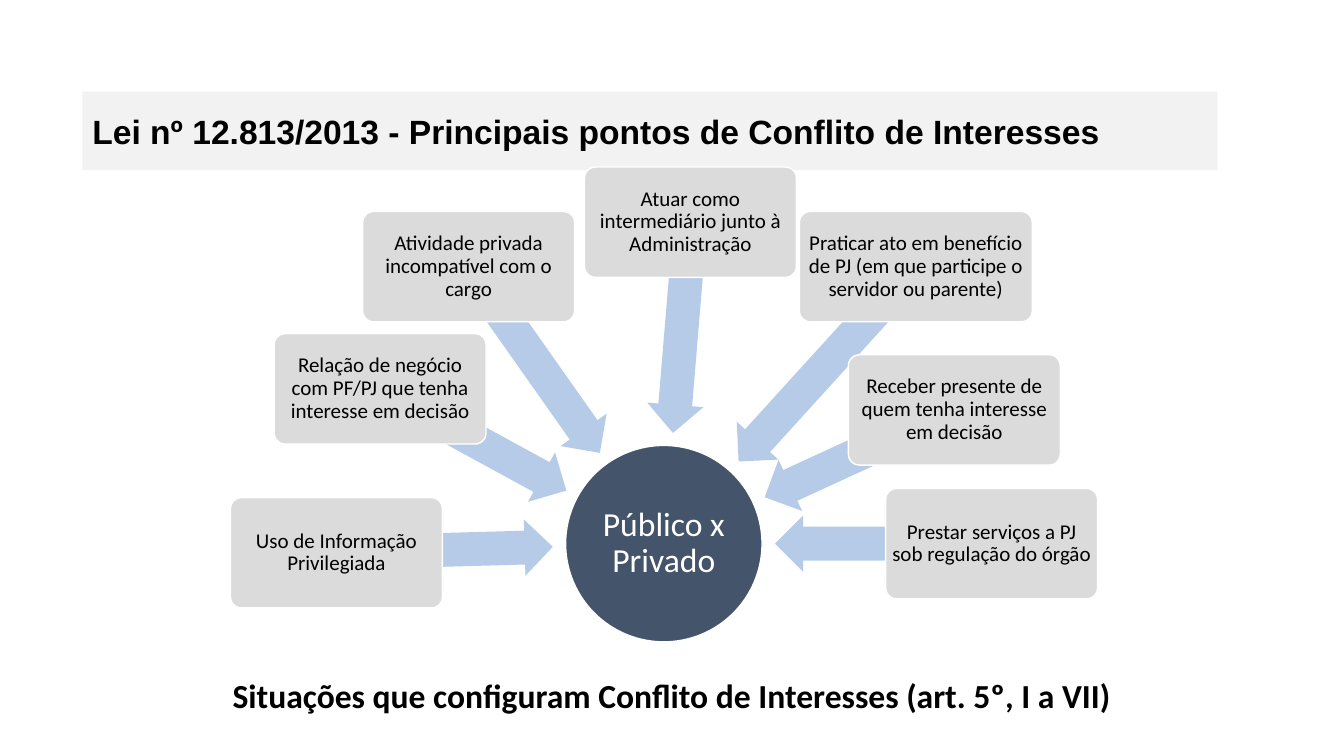
from dataclasses import dataclass
from math import atan2, degrees, hypot

from pptx import Presentation
from pptx.dml.color import RGBColor
from pptx.enum.shapes import MSO_SHAPE as Preset
from pptx.enum.text import MSO_ANCHOR as Anchor, PP_ALIGN as Align
from pptx.util import Cm, Pt


@dataclass(frozen=True)
class Theme:
    band: str = "F2F2F2"
    hub: str = "44546A"
    arrow: str = "B5CBE7"
    card: str = "DBDBDB"
    light: str = "FFFFFF"
    dark: str = "000000"
    heading_font: str = "Arial"
    body_font: str = "Calibri"
    large: int = 24
    small: int = 15


class Diagram:
    def __init__(self, slide, theme):
        self.slide = slide
        self.theme = theme

    def label(self, shape, text, size, color, font, bold=False,
              align=Align.CENTER, spacing=None, inset=None):
        frame = shape.text_frame
        frame.word_wrap = True
        frame.text = text
        if inset is not None:
            frame.margin_left = frame.margin_right = Cm(inset)
            frame.margin_top = frame.margin_bottom = Cm(inset)
        paragraph = frame.paragraphs[0]
        paragraph.alignment = align
        if spacing:
            paragraph.line_spacing = spacing
        for run in paragraph.runs:
            run.font.size = Pt(size)
            run.font.name = font
            run.font.bold = bold
            run.font.color.rgb = RGBColor.from_string(color)

    def shape(self, preset, center, width, height, fill, outlined=False):
        x, y = center
        shape = self.slide.shapes.add_shape(
            preset, Cm(x - width / 2), Cm(y - height / 2), Cm(width), Cm(height))
        shape.shadow.inherit = False
        shape.fill.solid()
        shape.fill.fore_color.rgb = RGBColor.from_string(fill)
        if outlined:
            shape.line.color.rgb = RGBColor.from_string(self.theme.light)
            shape.line.width = Pt(1)
        else:
            shape.line.fill.background()
        shape.text_frame.vertical_anchor = Anchor.MIDDLE
        return shape

    def title(self, text, center, width, height):
        band = self.shape(Preset.RECTANGLE, center, width, height, self.theme.band)
        self.label(band, text, self.theme.large, self.theme.dark,
                   self.theme.heading_font, bold=True, align=Align.JUSTIFY)

    def caption(self, text, left, top, width, height):
        caption = self.slide.shapes.add_textbox(Cm(left), Cm(top), Cm(width), Cm(height))
        self.label(caption, text, self.theme.large, self.theme.dark,
                   self.theme.body_font, bold=True)

    def hub(self, text, center, diameter):
        hub = self.shape(Preset.OVAL, center, diameter, diameter, self.theme.hub, True)
        self.label(hub, text, self.theme.large, self.theme.light,
                   self.theme.body_font, spacing=0.9, inset=0.05)

    def arrow(self, start, hub_center, clearance, thickness):
        """Points from a card's centre to a fixed distance from the hub's centre."""
        dx, dy = start[0] - hub_center[0], start[1] - hub_center[1]
        distance = hypot(dx, dy)
        length = distance - clearance
        ratio = (clearance + length / 2) / distance
        middle = (hub_center[0] + dx * ratio, hub_center[1] + dy * ratio)
        arrow = self.shape(Preset.LEFT_ARROW, middle, length, thickness, self.theme.arrow)
        arrow.adjustments[0] = 0.6
        arrow.adjustments[1] = 0.5
        arrow.rotation = degrees(atan2(dy, dx)) % 360

    def card(self, text, center, width, height):
        card = self.shape(Preset.ROUNDED_RECTANGLE, center, width, height,
                          self.theme.card, True)
        card.adjustments[0] = 0.1
        self.label(card, text, self.theme.small, self.theme.dark,
                   self.theme.body_font, spacing=0.9, inset=0.08)


HUB_CENTER = (16.73, 13.7)
CARD_WIDTH, WIDE_CARD, CARD_HEIGHT = 5.34, 5.87, 2.78
SITUATIONS = [
    ("Uso de Informação Privilegiada", (8.48, 13.93), CARD_WIDTH),
    ("Relação de negócio com PF/PJ que tenha interesse em decisão",
     (9.58, 9.8), CARD_WIDTH),
    ("Atividade privada incompatível com o cargo", (11.81, 6.72), CARD_WIDTH),
    ("Atuar como intermediário junto à Administração", (17.4, 5.6), CARD_WIDTH),
    ("Praticar ato em benefício de PJ (em que participe o servidor ou parente)",
     (23.08, 6.72), WIDE_CARD),
    ("Receber presente de quem tenha interesse em decisão",
     (24.05, 10.33), CARD_WIDTH),
    ("Prestar serviços a PJ sob regulação do órgão", (24.99, 13.7), CARD_WIDTH),
]


def main():
    deck = Presentation()
    deck.slide_width, deck.slide_height = Cm(33.87), Cm(19.05)
    diagram = Diagram(deck.slides.add_slide(deck.slide_layouts[6]), Theme())

    # Heading and closing line
    diagram.title("Lei nº 12.813/2013 - Principais pontos de Conflito de Interesses",
                  (16.38, 3.3), 28.6, 1.98)
    diagram.caption("Situações que configuram Conflito de Interesses (art. 5º, I a VII)",
                    3.73, 16.89, 26.39, 1.27)

    # Hub with the situations converging on it
    diagram.hub("Público x Privado", HUB_CENTER, 4.95)
    for situation, center, width in SITUATIONS:
        diagram.arrow(center, HUB_CENTER, clearance=2.8, thickness=1.42)
        diagram.card(situation, center, width, CARD_HEIGHT)

    deck.save("out.pptx")


if __name__ == "__main__":
    main()
